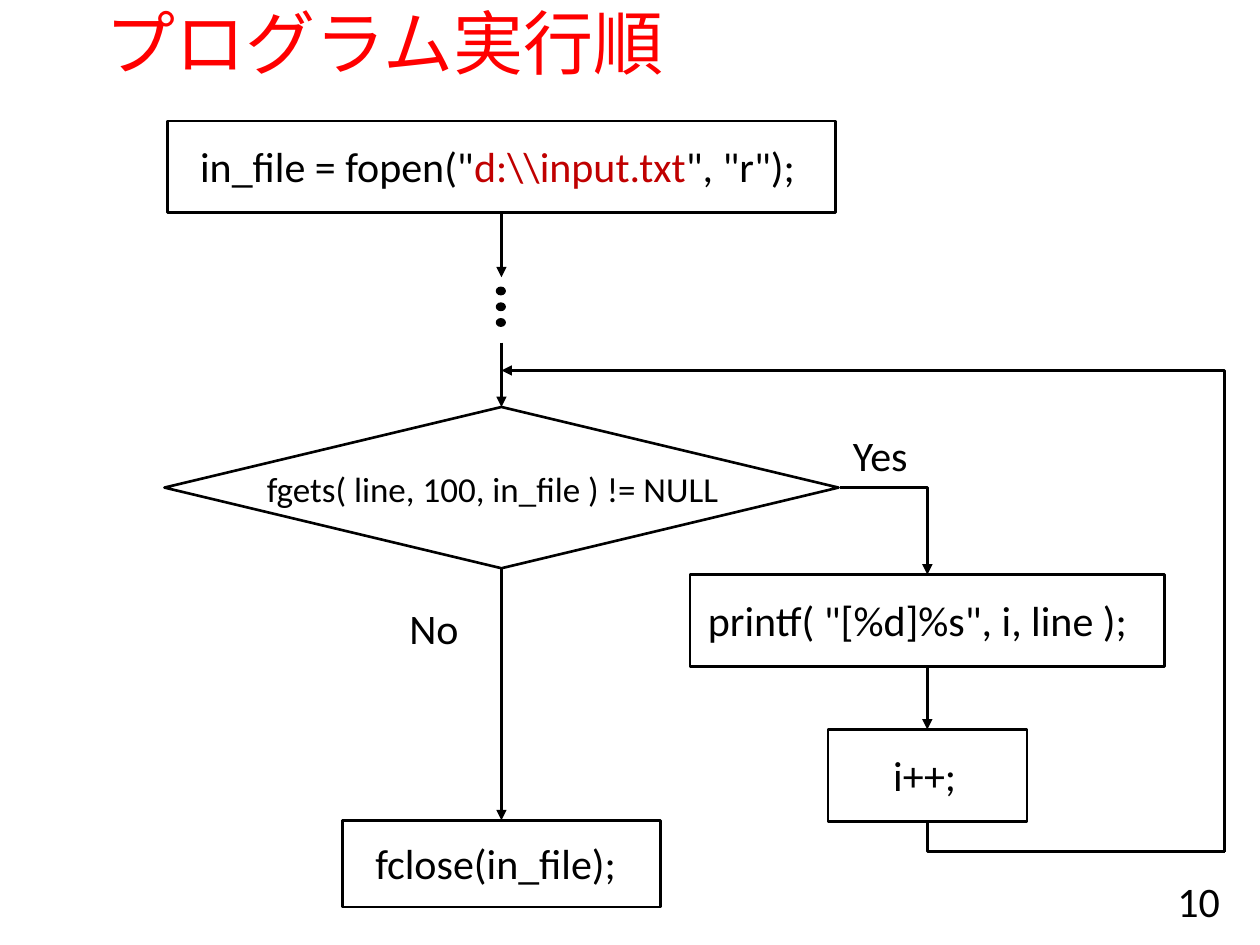
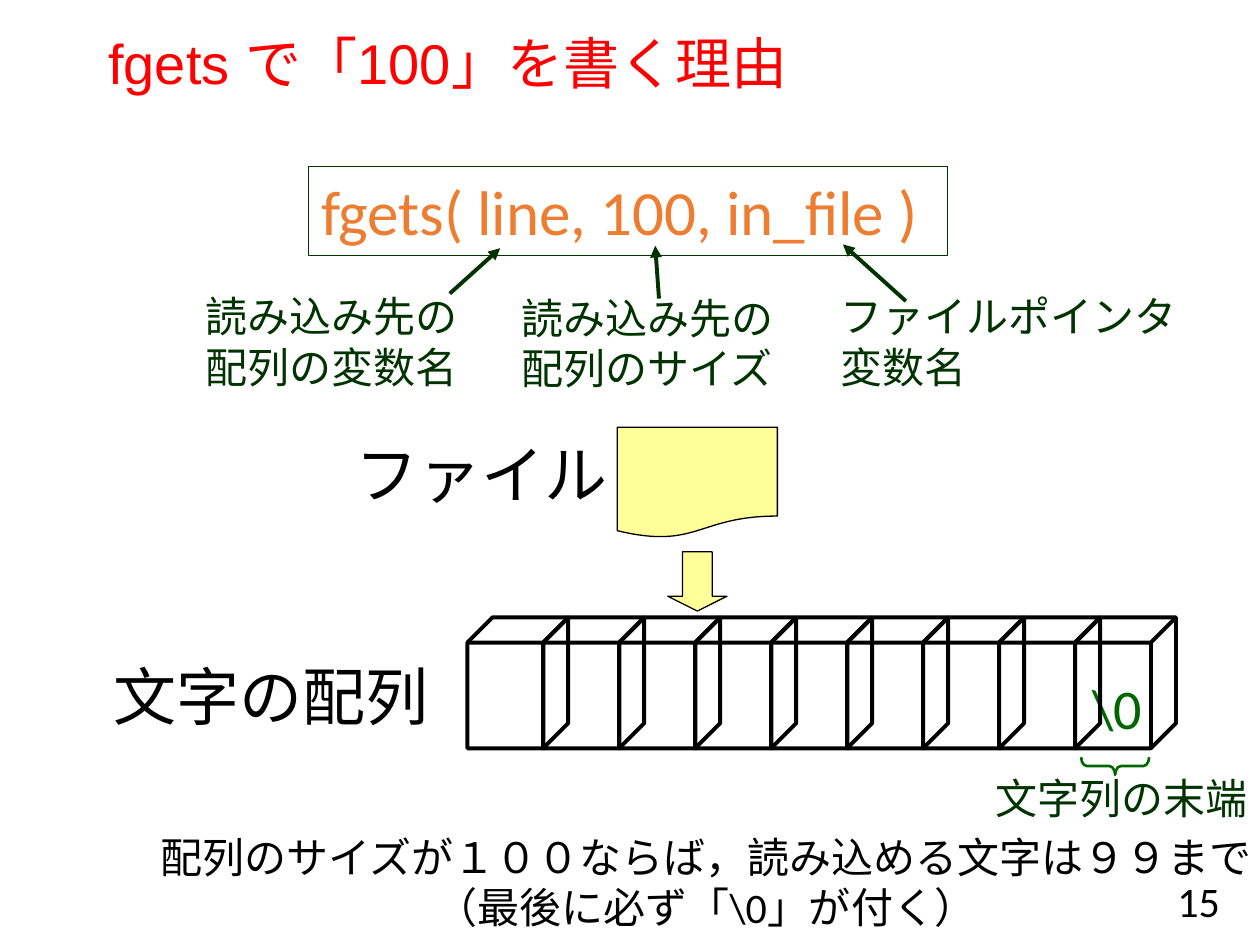
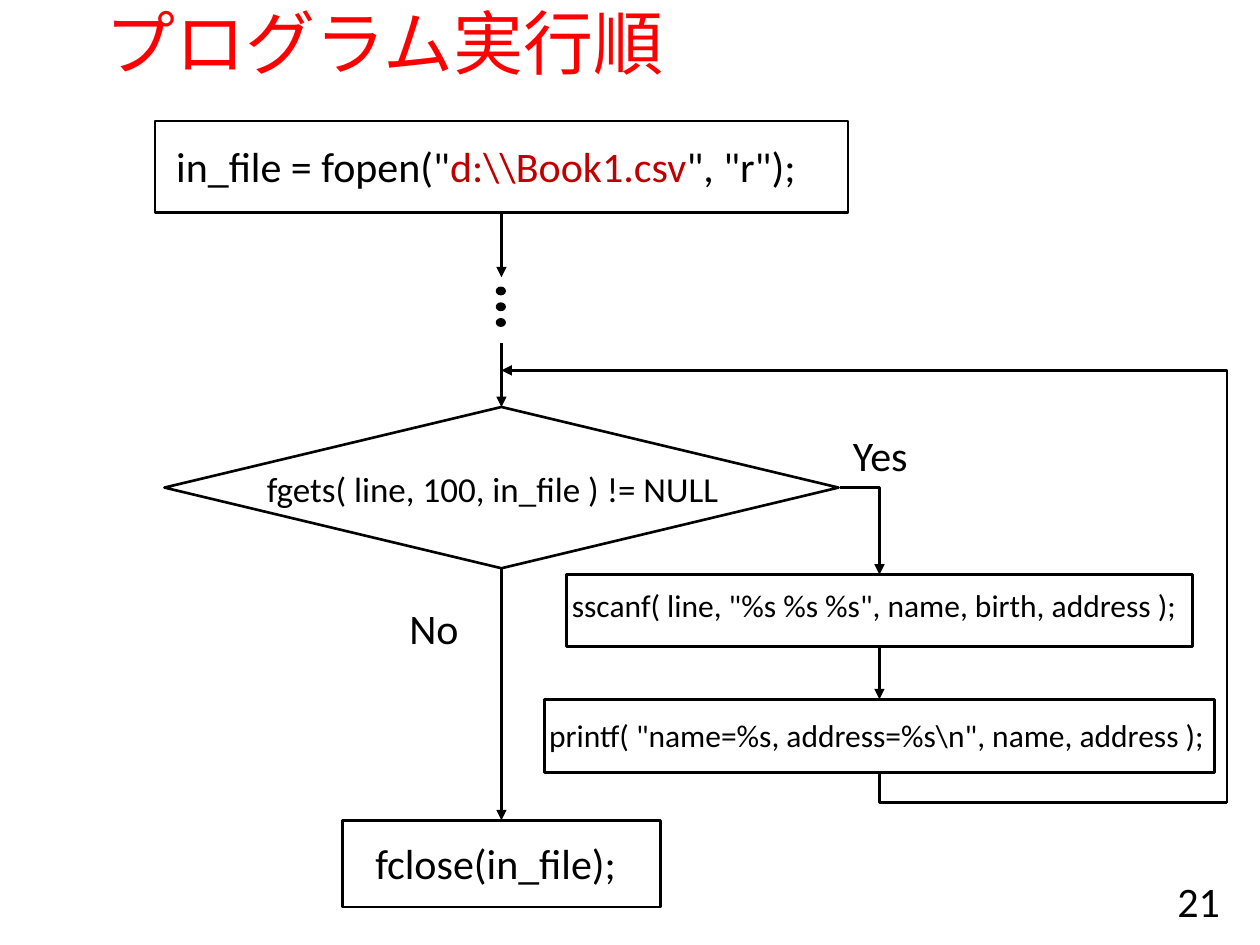
"""Build three slides on reading a file in C: two flowcharts and one fgets diagram."""
from dataclasses import dataclass
from typing import Optional

from lxml import etree
from pptx import Presentation
from pptx import util as u
from pptx.dml.color import RGBColor
from pptx.enum import shapes, text
from pptx.oxml import ns

WIDTH, HEIGHT = u.Inches(10), u.Inches(7.5)
COLUMNS, ROWS = 100, 75

BLACK = RGBColor(0x00, 0x00, 0x00)
RED = RGBColor(0xFF, 0x00, 0x00)
PATH_RED = RGBColor(0xC0, 0x00, 0x00)
ORANGE = RGBColor(0xED, 0x7D, 0x31)
DARK_GREEN = RGBColor(0x00, 0x33, 0x00)
GREEN = RGBColor(0x00, 0x66, 0x00)
YELLOW = RGBColor(0xFF, 0xFF, 0x99)

TITLE_FONT, BODY_FONT = "Arial", "Calibri"
LEFT, CENTER, RIGHT = text.PP_ALIGN.LEFT, text.PP_ALIGN.CENTER, text.PP_ALIGN.RIGHT
KIND = shapes.MSO_SHAPE
TOP_SIDE, BOTTOM_SIDE = 0, 2
MAIN_AXIS = 39.8
LOOP_ROW = 29.4

Point = tuple[float, float]


@dataclass(frozen=True)
class Area:
    left: float
    top: float
    width: float
    height: float


@dataclass(frozen=True)
class Span:
    words: str
    color: RGBColor = BLACK


@dataclass(frozen=True)
class Label:
    area: Area
    lines: tuple[tuple[Span, ...], ...]
    size: int = 24
    align: text.PP_ALIGN = LEFT
    anchor: text.MSO_ANCHOR = text.MSO_ANCHOR.TOP
    wrap: bool = False


@dataclass(frozen=True)
class Step:
    top: float
    width: float
    height: float
    label: Label


@dataclass(frozen=True)
class Flow:
    number: int
    opening: Step
    branch_axis: float
    branch: tuple[Step, Step]
    corner: Point


def col(count: float) -> u.Emu:
    return u.Emu(round(WIDTH * count / COLUMNS))


def row(count: float) -> u.Emu:
    return u.Emu(round(HEIGHT * count / ROWS))


def corners(area: Area) -> tuple[u.Emu, ...]:
    return col(area.left), row(area.top), col(area.width), row(area.height)


def plain(area: Area, *lines: str, color: RGBColor = BLACK, **options) -> Label:
    return Label(area, tuple((Span(line, color),) for line in lines), **options)


def write(frame, label: Label) -> None:
    frame.word_wrap = label.wrap
    frame.vertical_anchor = label.anchor
    if not label.wrap:
        frame.auto_size = text.MSO_AUTO_SIZE.SHAPE_TO_FIT_TEXT
    for index, line in enumerate(label.lines):
        para = frame.add_paragraph() if index else frame.paragraphs[0]
        para.alignment = label.align
        for span in line:
            run = para.add_run()
            run.text = span.words
            run.font.name = BODY_FONT
            run.font.size = u.Pt(label.size)
            run.font.color.rgb = span.color


def add_label(page, label: Label) -> None:
    write(page.shapes.add_textbox(*corners(label.area)).text_frame, label)


def add_figure(tree, kind: KIND, area: Area, weight: float = 1.5,
               line: RGBColor = BLACK, fill: Optional[RGBColor] = None):
    figure = tree.add_shape(kind, *corners(area))
    figure.shadow.inherit = False
    if fill is None:
        figure.fill.background()
    else:
        figure.fill.solid()
        figure.fill.fore_color.rgb = fill
    figure.line.color.rgb = line
    figure.line.width = u.Pt(weight)
    return figure


def add_link(page, begin: Point, end: Point, arrow: str = "", bent: bool = False,
             color: RGBColor = BLACK, weight: float = 1.5):
    kind = shapes.MSO_CONNECTOR.ELBOW if bent else shapes.MSO_CONNECTOR.STRAIGHT
    link = page.shapes.add_connector(
        kind, col(begin[0]), row(begin[1]), col(end[0]), row(end[1]))
    link.line.color.rgb = color
    link.line.width = u.Pt(weight)
    properties = link._element.spPr
    if bent:
        properties.find(ns.qn("a:prstGeom")).set("prst", "bentConnector2")
    if arrow:
        outline = properties.find(ns.qn("a:ln"))
        etree.SubElement(outline, ns.qn(f"a:{arrow}End"), type="triangle")
    etree.SubElement(properties, ns.qn("a:effectLst"))
    return link


def add_page(deck, title: str, area: Area, size: int, number: int):
    page = deck.slides.add_slide(deck.slide_layouts[5])
    box = page.shapes.title
    box.left, box.top, box.width, box.height = corners(area)
    frame = box.text_frame
    frame.auto_size = text.MSO_AUTO_SIZE.NONE
    frame.vertical_anchor = text.MSO_ANCHOR.MIDDLE
    para = frame.paragraphs[0]
    para.alignment = LEFT
    para.line_spacing = 0.9
    run = para.add_run()
    run.text = title
    run.font.name = TITLE_FONT
    run.font.size = u.Pt(size)
    run.font.color.rgb = RED
    add_label(page, plain(Area(75.3, 69.5, 22.5, 4), str(number), align=RIGHT,
                          anchor=text.MSO_ANCHOR.MIDDLE, wrap=True))
    return page


def add_step(page, step: Step, axis: float):
    area = Area(axis - step.width / 2, step.top, step.width, step.height)
    figure = add_figure(page.shapes, KIND.RECTANGLE, area)
    add_label(page, step.label)
    return figure


def join(page, above, below, axis: float) -> None:
    link = add_link(page, (axis, 0), (axis, 1), "tail")
    link.begin_connect(above, BOTTOM_SIDE)
    link.end_connect(below, TOP_SIDE)


def add_flow(deck, flow: Flow) -> None:
    page = add_page(deck, "プログラム実行順", Area(7.4, -0.1, 85, 7.7), 40, flow.number)
    test_area = Area(MAIN_AXIS - 26.75, 32.3, 53.5, 12.8)
    test = add_figure(page.shapes, KIND.FLOWCHART_DECISION, test_area)
    opening = add_step(page, flow.opening, MAIN_AXIS)
    closing = add_step(page, CLOSING, MAIN_AXIS)
    for label in TEST_LABELS:
        add_label(page, label)

    link = add_link(page, (MAIN_AXIS, 16.9), (MAIN_AXIS, 22), "tail")
    link.begin_connect(opening, BOTTOM_SIDE)
    dots = page.shapes.add_group_shape()
    for index in range(3):
        add_figure(dots.shapes, KIND.OVAL,
                   Area(39.4, 22.8 + 1.25 * index, 0.7, 0.6), 0.75, fill=BLACK)
    link = add_link(page, (MAIN_AXIS, 27.2), (MAIN_AXIS, 32.3), "tail")
    link.end_connect(test, TOP_SIDE)
    join(page, test, closing, MAIN_AXIS)

    first, last = (add_step(page, step, flow.branch_axis) for step in flow.branch)
    join(page, first, last, flow.branch_axis)
    add_link(page, (66.7, 38.7), (flow.branch_axis, flow.branch[0].top), "tail", bent=True)
    end = flow.branch[1]
    add_link(page, flow.corner, (flow.branch_axis, end.top + end.height), bent=True)
    add_link(page, (MAIN_AXIS, LOOP_ROW), flow.corner, "head", bent=True)


def opening_step(width: float, area: Area, path_words: str) -> Step:
    line = (Span('in_file = fopen("'), Span(path_words, PATH_RED), Span('", "r");'))
    return Step(9.6, width, 7.3, Label(area, (line,)))


def add_reason(deck) -> None:
    page = add_page(deck, "fgets で「100」を書く理由", Area(7.6, 1.4, 85, 7.7), 32, 15)
    tree = page.shapes
    call = add_figure(tree, KIND.RECTANGLE, Area(24.5, 13.2, 50.7, 7.1), 0.75, DARK_GREEN)
    write(call.text_frame, plain(Area(24.5, 13.2, 50.7, 7.1), "fgets( line, 100, in_file )",
                                 color=ORANGE, size=36))
    for label in REASON_LABELS:
        add_label(page, label)
    for begin, end in ARGUMENT_ARROWS:
        add_link(page, begin, end, "tail", color=DARK_GREEN, weight=2.25)

    add_figure(tree, KIND.FLOWCHART_DOCUMENT, Area(49, 33.9, 12.7, 8.8), 0.75, fill=YELLOW)
    arrow = add_figure(tree, KIND.DOWN_ARROW, Area(53, 43.8, 4.7, 4.7), 0.75, fill=YELLOW)
    arrow.adjustments[1] = 0.25
    for index in range(9):
        add_figure(tree, KIND.CUBE, Area(37.1 + 6.03 * index, 49, 8, 10.4), 2.25)
    brace = add_figure(tree, KIND.RIGHT_BRACE, Area(87.8, 58.1, 1.4, 5.4), 1.5, GREEN)
    brace.adjustments[0] = 0.33
    brace.rotation = 90


CLOSING = Step(65.1, 25.2, 6.9, plain(Area(28.8, 66, 21.8, 5), "fclose(in_file);"))
TEST_LABELS = (
    plain(Area(20.2, 36.6, 38.2, 4.4), "fgets( line, 100, in_file ) != NULL", size=20),
    plain(Area(66.7, 33.6, 7.2, 5), "Yes", wrap=True),
    plain(Area(31.5, 47.3, 6.1, 5), "No"),
)
TEXT_FLOW = Flow(
    10, opening_step(53, Area(14.9, 10.7, 50.7, 5), r"d:\\input.txt"), 73.6,
    (Step(45.6, 37.7, 7.3, plain(Area(55.2, 46.7, 36.4, 5), 'printf( "[%d]%s", i, line );')),
     Step(57.9, 15.8, 7.3, plain(Area(69.9, 59, 7.1, 5), "i++;"))),
    (97.2, 67.6),
)
TABLE_FLOW = Flow(
    21, opening_step(55, Area(13, 10.7, 53.5, 5), r"d:\\Book1.csv"), 69.8,
    (Step(45.6, 49.7, 5.7, plain(Area(44.4, 46, 50.8, 4),
                                 'sscanf( line, "%s %s %s", name, birth, address );', size=18)),
     Step(55.5, 53.2, 5.8, plain(Area(42.6, 56.3, 54.9, 4),
                                 r'printf( "name=%s, address=%s\n", name, address );', size=18))),
    (97.4, 63.7),
)
REASON_LABELS = (
    plain(Area(15.3, 22.6, 22.2, 9.1), "読み込み先の", "配列の変数名", color=DARK_GREEN),
    plain(Area(40.4, 22.7, 22.2, 9.1), "読み込み先の", "配列のサイズ", color=DARK_GREEN),
    plain(Area(65.7, 22.6, 28.9, 9.1), "ファイルポインタ", "変数名", color=DARK_GREEN),
    plain(Area(27.2, 34.1, 22.2, 7.1), "ファイル", size=36),
    plain(Area(8, 51.7, 27, 7), "文字の配列", size=36),
    plain(Area(85.7, 53, 6.6, 6.4), r"\0", color=GREEN, size=32),
    plain(Area(78, 60.8, 22, 5), "文字列の末端", color=DARK_GREEN),
    plain(Area(11.3, 65.5, 89.5, 9.1),
          "配列のサイズが１００ならば，読み込める文字は９９まで",
          r"（最後に必ず「\0」が付く）", align=CENTER),
)
ARGUMENT_ARROWS = (
    ((35.7, 23.3), (39.7, 19.7)),
    ((52.3, 23.7), (52, 19.5)),
    ((71.9, 23.9), (66.9, 19.4)),
)


def main() -> None:
    deck = Presentation()
    deck.slide_width, deck.slide_height = WIDTH, HEIGHT
    add_flow(deck, TEXT_FLOW)
    add_reason(deck)
    add_flow(deck, TABLE_FLOW)
    deck.save("out.pptx")


if __name__ == "__main__":
    main()
